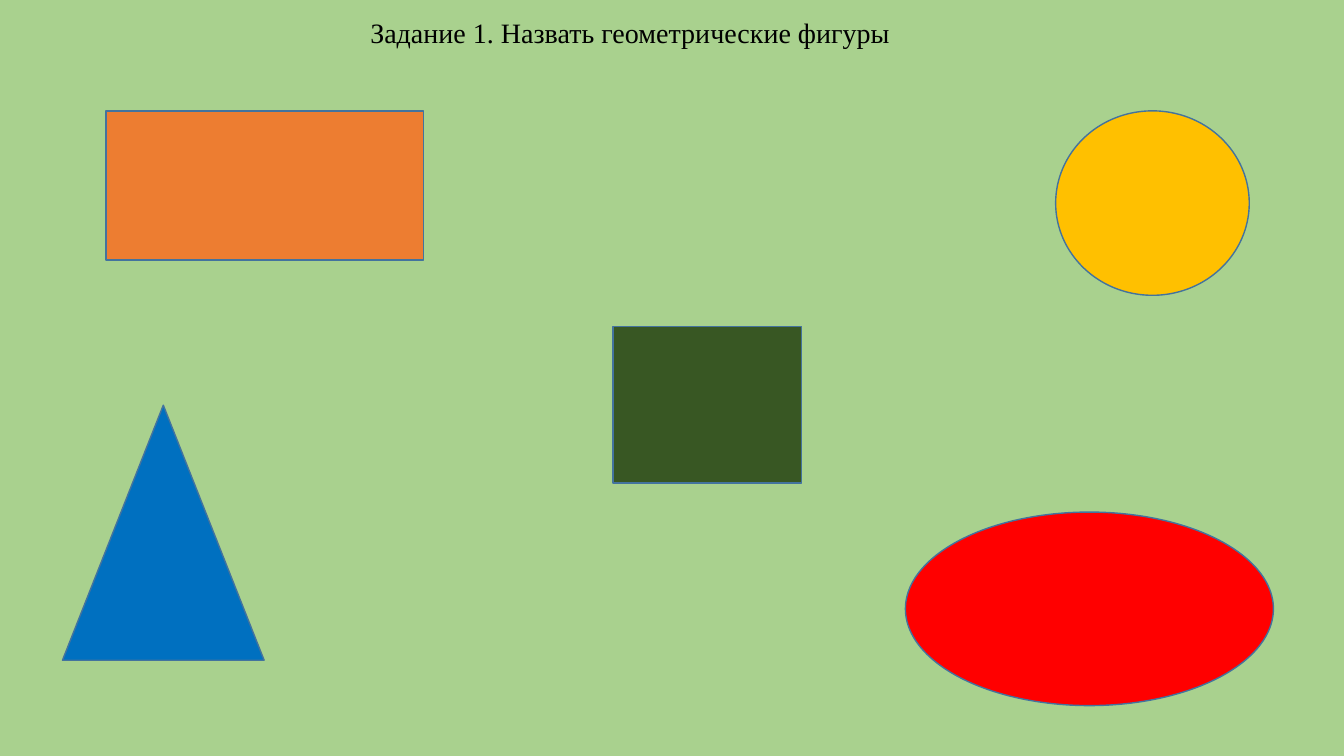
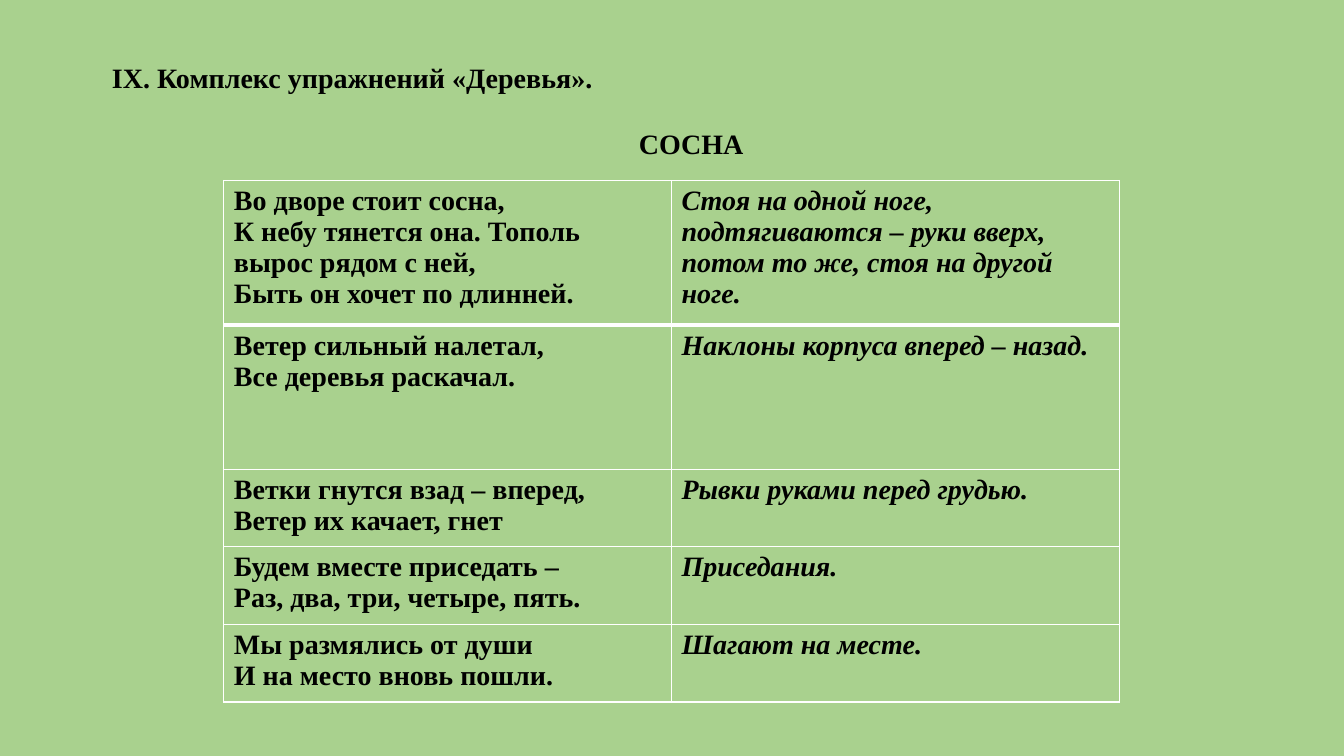
from lxml.etree import SubElement
from pptx import Presentation
from pptx.dml.color import RGBColor
from pptx.enum.shapes import MSO_SHAPE
from pptx.enum.text import MSO_ANCHOR, MSO_AUTO_SIZE, PP_ALIGN
from pptx.oxml.ns import qn
from pptx.util import Inches, Pt

BACKGROUND = "A9D18E"
TEXT = "000000"
OUTLINE = "43739E"
GRID = "FFFFFF"
FONT = "Times New Roman"
FONT_SIZE = 20

FIGURES = [
    (MSO_SHAPE.RECTANGLE, "ED7D31", (1.05, 1.1, 3.15, 1.48)),
    (MSO_SHAPE.OVAL, "FFC000", (10.47, 1.1, 1.92, 1.83)),
    (MSO_SHAPE.ISOSCELES_TRIANGLE, "0070C0", (0.62, 4.02, 2, 2.53)),
    (MSO_SHAPE.OVAL, "FF0000", (8.98, 5.08, 3.65, 1.92)),
    (MSO_SHAPE.RECTANGLE, "385723", (6.08, 3.24, 1.87, 1.55)),
]

# Row height, lines of the verse, movement
EXERCISES = [
    (1.43, ["Во дворе стоит сосна,",
            "К небу тянется она. Тополь вырос рядом с ней,",
            "Быть он хочет по длинней."],
     "Стоя на одной ноге, подтягиваются – руки вверх, потом то же, стоя на другой ноге."),
    (1.43, ["Ветер сильный налетал,", "Все деревья раскачал."],
     "Наклоны корпуса вперед – назад."),
    (0.77, ["Ветки гнутся взад – вперед,", "Ветер их качает, гнет"],
     "Рывки руками перед грудью."),
    (0.77, ["Будем вместе приседать –", "Раз, два, три, четыре, пять."],
     "Приседания."),
    (0.77, ["Мы размялись от души", "И на место вновь пошли."],
     "Шагают на месте."),
]


def color(hex_string):
    return RGBColor.from_string(hex_string)


def inches(box):
    return [Inches(length) for length in box]


class Deck:
    def __init__(self):
        self.presentation = Presentation()
        self.presentation.slide_width = Inches(13.33)
        self.presentation.slide_height = Inches(7.5)
        fill = self.presentation.slide_master.background.fill
        fill.solid()
        fill.fore_color.rgb = color(BACKGROUND)
        self.slide = None

    def add_slide(self):
        title_only = self.presentation.slide_layouts[5]
        self.slide = self.presentation.slides.add_slide(title_only)

    def set_text(self, frame, lines, align=PP_ALIGN.LEFT, bold=True, italic=False):
        """Fill a text frame with one paragraph per line in the shared style."""
        frame.word_wrap = True
        frame.text = "\n".join(lines)
        for paragraph in frame.paragraphs:
            paragraph.alignment = align
            font = paragraph.font
            font.name, font.size = FONT, Pt(FONT_SIZE)
            font.bold, font.italic = bold, italic
            font.color.rgb = color(TEXT)

    def title(self, text, box, **style):
        heading = self.slide.shapes.title
        heading.left, heading.top, heading.width, heading.height = inches(box)
        frame = heading.text_frame
        frame.auto_size = MSO_AUTO_SIZE.NONE
        frame.vertical_anchor = MSO_ANCHOR.TOP
        self.set_text(frame, [text], **style)

    def label(self, text, box, **style):
        frame = self.slide.shapes.add_textbox(*inches(box)).text_frame
        self.set_text(frame, [text], **style)

    def figure(self, kind, fill, box):
        figure = self.slide.shapes.add_shape(kind, *inches(box))
        figure.shadow.inherit = False
        figure.fill.solid()
        figure.fill.fore_color.rgb = color(fill)
        figure.line.color.rgb = color(OUTLINE)
        figure.line.width = Pt(1)

    def border(self, cell, side, points):
        """Draw one cell edge; side is L, R, T or B."""
        properties = cell._tc.get_or_add_tcPr()
        edge = SubElement(properties, qn(f"a:ln{side}"), w=str(Pt(points)))
        solid = SubElement(edge, qn("a:solidFill"))
        SubElement(solid, qn("a:srgbClr"), val=GRID)

    def exercise_table(self, exercises, left, top, column_width):
        height = sum(row_height for row_height, _, _ in exercises)
        box = (left, top, 2 * column_width, height)
        table = self.slide.shapes.add_table(len(exercises), 2, *inches(box)).table
        table.first_row = table.horz_banding = False
        for column in table.columns:
            column.width = Inches(column_width)
        for index, (row_height, verse, movement) in enumerate(exercises):
            table.rows[index].height = Inches(row_height)
            verse_cell, movement_cell = table.rows[index].cells
            self.set_text(verse_cell.text_frame, verse)
            self.set_text(movement_cell.text_frame, [movement], italic=True)
            for cell in (verse_cell, movement_cell):
                for side in "LRTB":
                    below_first = (index, side) in ((0, "B"), (1, "T"))
                    self.border(cell, side, 3 if below_first else 1)
                cell.fill.background()


def main():
    deck = Deck()

    deck.add_slide()
    deck.title("Задание 1. Назвать геометрические фигуры", (0.43, 0.1, 11.64, 0.74),
               align=PP_ALIGN.CENTER, bold=False)
    for kind, fill, box in FIGURES:
        deck.figure(kind, fill, box)

    deck.add_slide()
    deck.title("IX. Комплекс упражнений «Деревья».", (1.01, 0.55, 11.69, 0.5))
    deck.label("СОСНА", (1.01, 1.21, 11.69, 0.45), align=PP_ALIGN.CENTER)
    deck.exercise_table(EXERCISES, 2.22, 1.79, 4.44)

    deck.presentation.save("out.pptx")


if __name__ == "__main__":
    main()
